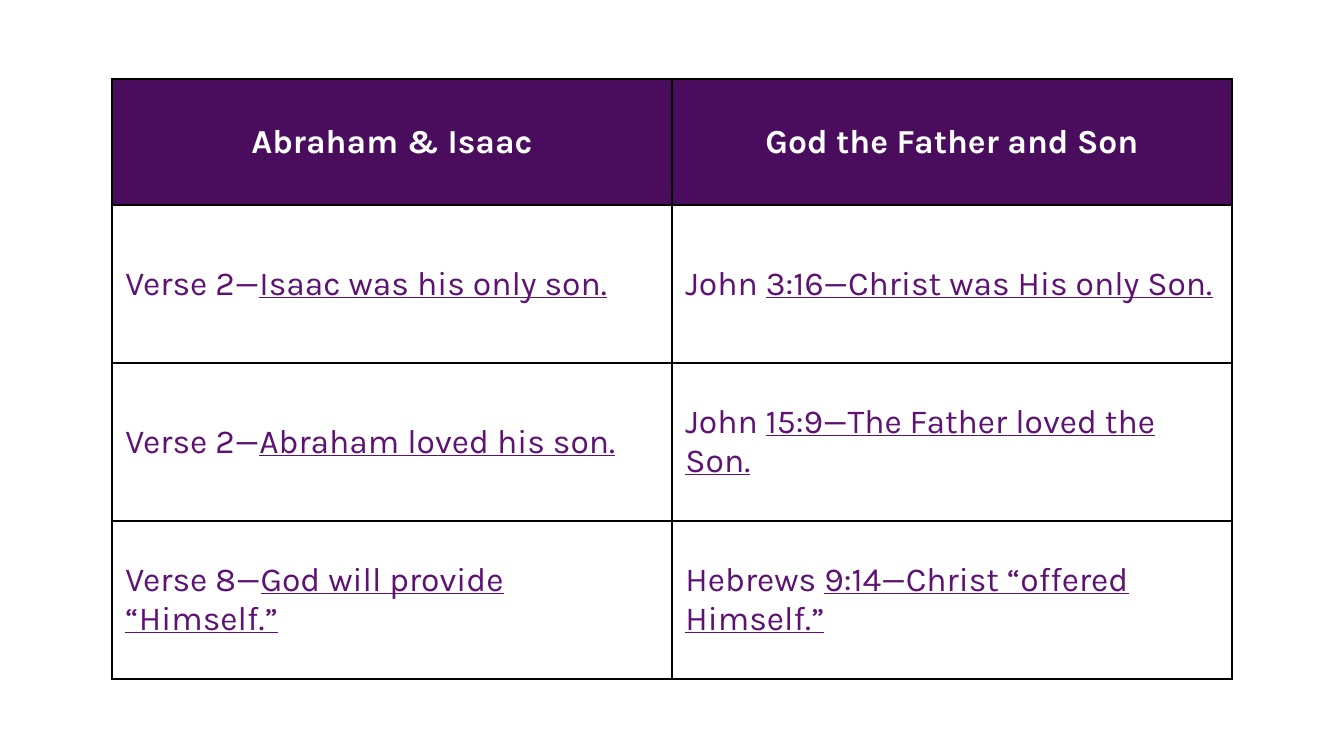
from dataclasses import dataclass

from lxml import etree
from pptx import Presentation
from pptx import util as u
from pptx.dml.color import RGBColor
from pptx.enum import text
from pptx.oxml.ns import qn

PX = 914400 / 134.4


def px(n):
    return u.Emu(round(n * PX))


@dataclass(frozen=True)
class Theme:
    font: str = "Karla"
    size: int = 18
    header_fill: str = "4A0D5E"
    header_text: str = "FFFFFF"
    body_text: str = "5D1274"
    border: str = "000000"
    border_pt: float = 1


THEME = Theme()

HEADERS = ["Abraham & Isaac", "God the Father and Son"]
# Each cell is a plain reference followed by an underlined statement.
COMPARISONS = [
    [("Verse 2—", "Isaac was his only son."),
     ("John ", "3:16—Christ was His only Son.")],
    [("Verse 2—", "Abraham loved his son."),
     ("John ", "15:9—The Father loved the Son.")],
    [("Verse 8—", "God will provide “Himself.”"),
     ("Hebrews ", "9:14—Christ “offered Himself.”")],
]


def add_borders(cell):
    tcPr = cell._tc.get_or_add_tcPr()
    for side in ("a:lnL", "a:lnR", "a:lnT", "a:lnB"):
        ln = etree.SubElement(tcPr, qn(side), w=str(u.Pt(THEME.border_pt)))
        fill = etree.SubElement(ln, qn("a:solidFill"))
        etree.SubElement(fill, qn("a:srgbClr"), val=THEME.border)


def add_run(p, words, color, bold=False, underline=False):
    r = p.add_run()
    r.text = words
    r.font.name = THEME.font
    r.font.size = u.Pt(THEME.size)
    r.font.color.rgb = RGBColor.from_string(color)
    r.font.bold = bold
    r.font.underline = underline


def format_cell(cell):
    """Border and centre the cell, and return its paragraph."""
    add_borders(cell)
    cell.vertical_anchor = text.MSO_ANCHOR.MIDDLE
    return cell.text_frame.paragraphs[0]


def header_cell(cell, words):
    p = format_cell(cell)
    cell.fill.solid()
    cell.fill.fore_color.rgb = RGBColor.from_string(THEME.header_fill)
    p.alignment = text.PP_ALIGN.CENTER
    add_run(p, words, THEME.header_text, bold=True)


def body_cell(cell, reference, statement):
    p = format_cell(cell)
    cell.fill.background()
    p.alignment = text.PP_ALIGN.LEFT
    add_run(p, reference, THEME.body_text)
    add_run(p, statement, THEME.body_text, underline=True)


def comparison_table(s, left, top, width, height, header_height):
    n_rows, n_cols = len(COMPARISONS) + 1, len(HEADERS)
    table = s.shapes.add_table(
        n_rows, n_cols, px(left), px(top), px(width), px(height)).table
    table.first_row = table.horz_banding = False
    for col in table.columns:
        col.width = px(width // n_cols)
    for row in table.rows:
        row.height = px((height - header_height) // len(COMPARISONS))
    table.rows[0].height = px(header_height)

    for c, words in enumerate(HEADERS):
        header_cell(table.cell(0, c), words)
    for r, row in enumerate(COMPARISONS, start=1):
        for c, (reference, statement) in enumerate(row):
            body_cell(table.cell(r, c), reference, statement)


def main():
    prs = Presentation()
    prs.slide_width, prs.slide_height = px(1344), px(756)
    s = prs.slides.add_slide(prs.slide_layouts[6])
    comparison_table(s, 112, 79, 1120, 600, header_height=126)
    prs.save("out.pptx")


if __name__ == "__main__":
    main()
